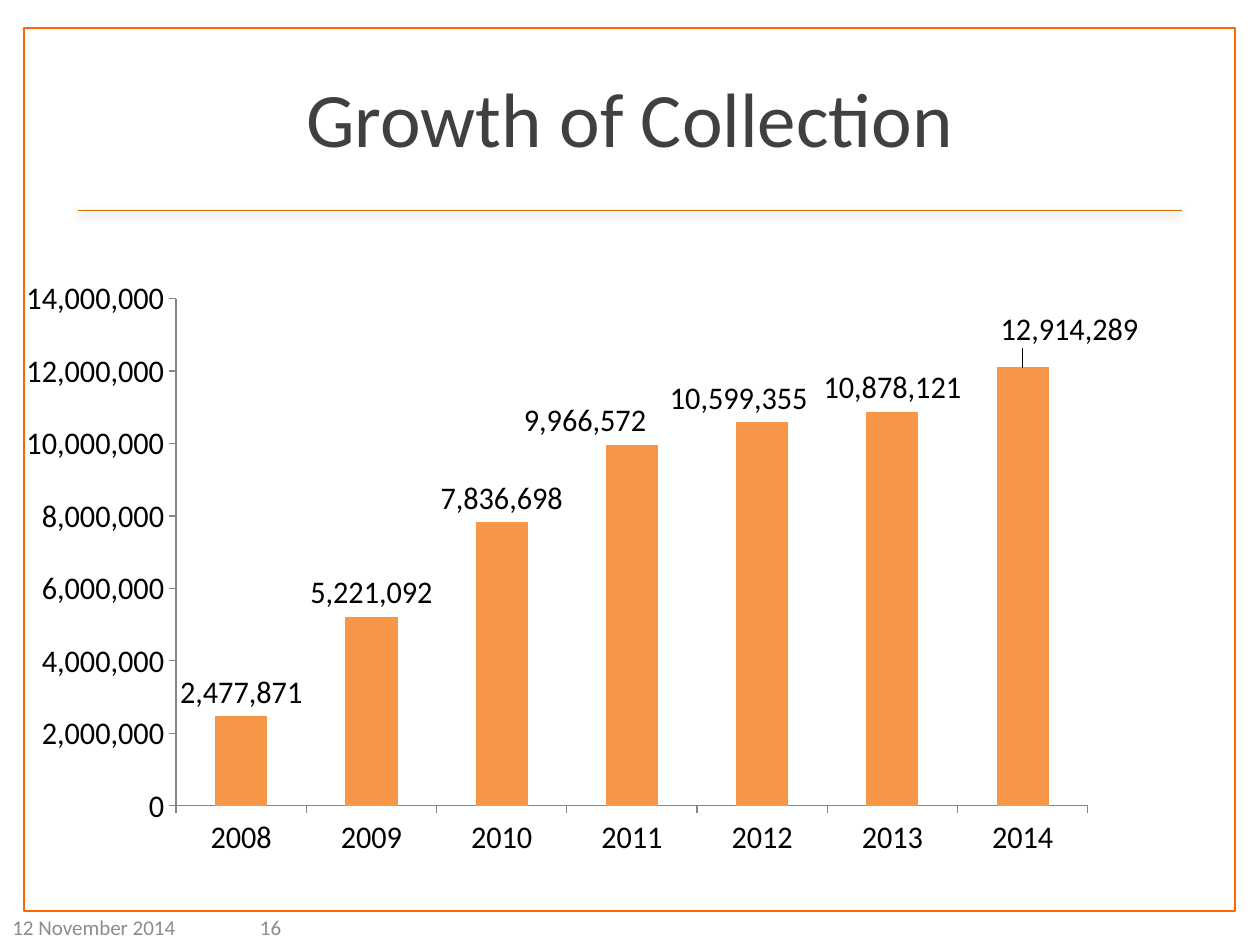
from lxml import etree
from pptx import Presentation
from pptx.chart.data import CategoryChartData
from pptx.dml.color import RGBColor
from pptx.enum.chart import XL_CHART_TYPE, XL_LABEL_POSITION as LABEL_POS, XL_TICK_MARK as TICK
from pptx.enum.shapes import MSO_CONNECTOR, MSO_SHAPE
from pptx.enum.text import MSO_ANCHOR, PP_ALIGN
from pptx.oxml import parse_xml
from pptx.oxml.ns import nsdecls
from pptx.util import Inches, Pt


def rgb(value):
    return RGBColor.from_string(value)


def add_text(text, left, top, width, height, size, color, align):
    tf = s.shapes.add_textbox(Inches(left), Inches(top), Inches(width), Inches(height)).text_frame
    tf.word_wrap = True
    tf.vertical_anchor = MSO_ANCHOR.MIDDLE
    p = tf.paragraphs[0]
    p.text = text
    p.alignment = align
    p.font.name = "Calibri"
    p.font.size = Pt(size)
    p.font.color.rgb = rgb(color)


prs = Presentation()
prs.slide_width, prs.slide_height = Inches(10), Inches(7.5)
s = prs.slides.add_slide(prs.slide_layouts[6])

# Frame
frame = s.shapes.add_shape(MSO_SHAPE.RECTANGLE, Inches(0.19), Inches(0.22), Inches(9.61), Inches(7.01))
frame.shadow.inherit = False
frame.fill.solid()
frame.fill.fore_color.rgb = rgb("FFFFFF")
frame.line.color.rgb = rgb("FF6600")
frame.line.width = Pt(1)

# Title and the shadowed rule below it
rule = s.shapes.add_connector(MSO_CONNECTOR.STRAIGHT, Inches(0.62), Inches(1.67), Inches(9.38), Inches(1.67))
rule.line.color.rgb = rgb("D57007")
rule.line.width = Pt(1)
rule._element.spPr.append(parse_xml(
    f'<a:effectLst {nsdecls("a")}>'
    '<a:outerShdw blurRad="63500" dist="22860" dir="5400000" rotWithShape="0">'
    '<a:srgbClr val="000000"><a:alpha val="35000"/></a:srgbClr></a:outerShdw></a:effectLst>'))
add_text("Growth of Collection", 0.5, 0.3, 9, 1.25, 44, "404040", PP_ALIGN.CENTER)

# Column chart
data = CategoryChartData(number_format="#,##0")
data.categories = [str(year) for year in range(2008, 2015)]
data.add_series("Series 1", (2477871, 5221092, 7836698, 9966572, 10599355, 10878121, 12104793))
chart = s.shapes.add_chart(XL_CHART_TYPE.COLUMN_CLUSTERED, Inches(0.21), Inches(1.47),
                           Inches(9.7), Inches(5.63), data).chart
chart.has_legend = False
chart.has_title = False
chart.font.name = "Calibri"
chart.font.size = Pt(18)
chart.font.color.rgb = rgb("000000")

for axis in (chart.category_axis, chart.value_axis):
    axis.major_tick_mark = TICK.OUTSIDE
    axis.minor_tick_mark = TICK.NONE
    axis.has_major_gridlines = False
    axis.format.line.color.rgb = rgb("868686")
    axis.format.line.width = Pt(0.75)
axis = chart.value_axis
axis.minimum_scale, axis.maximum_scale, axis.major_unit = 0, 14000000, 2000000
axis.tick_labels.number_format = "#,##0"
axis.tick_labels.number_format_is_linked = False

plot = chart.plots[0]
plot.gap_width = 150
plot.vary_by_categories = False
series = plot.series[0]
series.format.fill.solid()
series.format.fill.fore_color.rgb = rgb("F79646")

# Value labels; the last one has its own text
labels = series.data_labels
labels.show_value = True
labels.number_format = "#,##0"
labels.number_format_is_linked = False
labels.position = LABEL_POS.OUTSIDE_END
last_label = series.points[6].data_label
last_label.text_frame.text = "12,914,289"
font = last_label.text_frame.paragraphs[0].runs[0].font
font.name, font.size = "Calibri", Pt(18)
font.color.rgb = rgb("000000")


# Manual layouts: shifted labels and the inner plot area
def add_layout(parent, index, **values):
    layout = etree.SubElement(parent, f"{C}layout")
    manual = etree.SubElement(layout, f"{C}manualLayout")
    for tag, value in values.items():
        etree.SubElement(manual, f"{C}{tag}").set("val", str(value))
    parent.insert(index, layout)


C = "{http://schemas.openxmlformats.org/drawingml/2006/chart}"
shifts = {3: (-0.04, 0), 4: (-0.02, 0), 6: (0.04, -0.02)}
for i in shifts:
    series.points[i].data_label.position = LABEL_POS.OUTSIDE_END
for label in chart.element.iter(f"{C}dLbl"):
    dx, dy = shifts[int(label.find(f"{C}idx").get("val"))]
    add_layout(label, 1, x=dx, y=dy)
plot_area = chart.element.find(f".//{C}plotArea")
for old in plot_area.findall(f"{C}layout"):
    plot_area.remove(old)
add_layout(plot_area, 0, layoutTarget="inner", xMode="edge", yMode="edge",
           x=0.086, y=0.16, w=0.777, h=0.715)

# Footer: date and slide number
for text, align in (("12 November 2014", PP_ALIGN.LEFT), ("16", PP_ALIGN.RIGHT)):
    add_text(text, 0, 7.22, 2.33, 0.28, 12, "8C8C8C", align)

prs.save("out.pptx")
